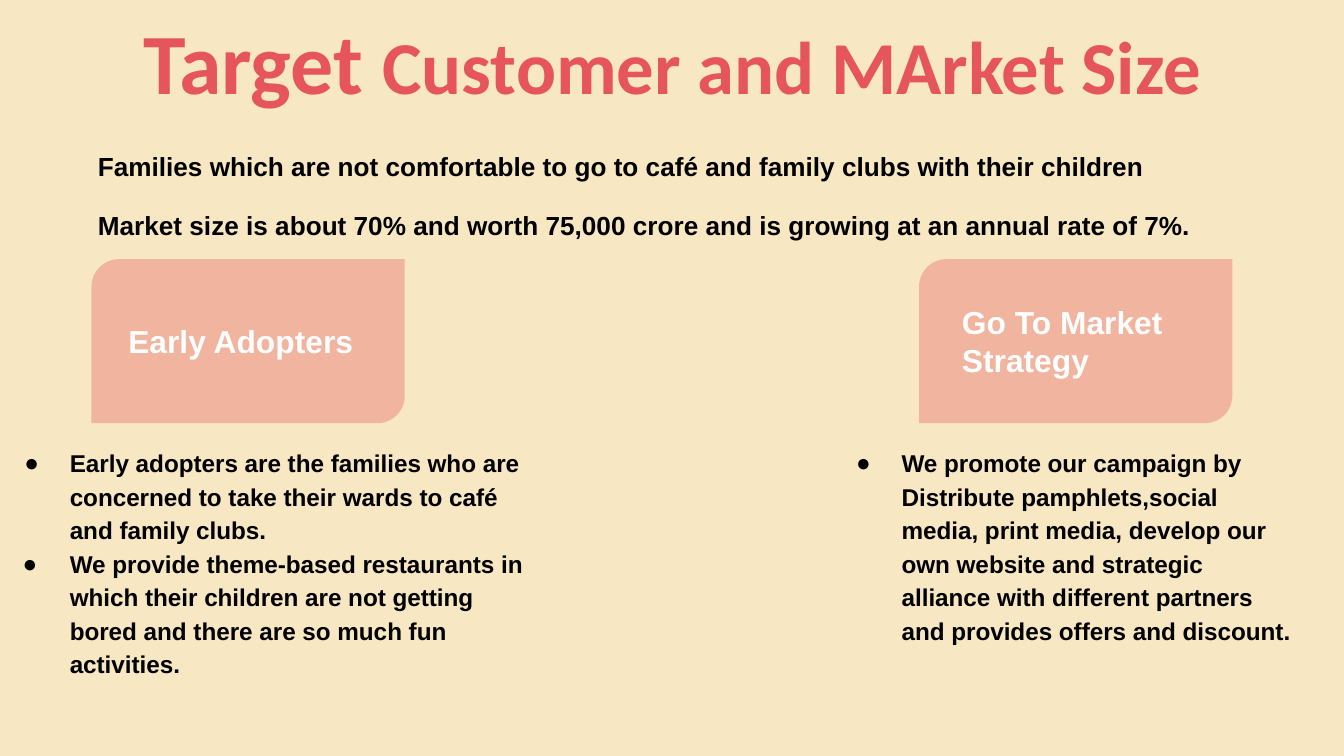
import pptx
import pptx.dml.color
import pptx.enum.shapes
import pptx.enum.text
import pptx.oxml.ns
import pptx.util
from lxml import etree

Cm = pptx.util.Cm
Pt = pptx.util.Pt
ALIGN = pptx.enum.text.PP_ALIGN
ANCHOR = pptx.enum.text.MSO_ANCHOR
qn = pptx.oxml.ns.qn

SAND, CORAL, BLACK, WHITE = "F7E7C3", "E6555C", "000000", "FFFFFF"


def color(hex_string):
    return pptx.dml.color.RGBColor.from_string(hex_string)


class SlideBuilder:
    """Holds the style and the current slide."""

    body_font = "Arial"
    title_font = "Calibri"
    inset = Cm(0.25)
    line_spacing = 1.15

    def __init__(self, presentation):
        self.slide = presentation.slides.add_slide(presentation.slide_layouts[6])
        fill = self.slide.background.fill
        fill.solid()
        fill.fore_color.rgb = color(SAND)

    def text_frame(self, left, top, width, height, anchor=ANCHOR.TOP):
        box = self.slide.shapes.add_textbox(Cm(left), Cm(top), Cm(width), Cm(height))
        frame = box.text_frame
        frame.word_wrap = True
        frame.vertical_anchor = anchor
        frame.margin_left = frame.margin_right = self.inset
        frame.margin_top = frame.margin_bottom = self.inset
        return frame

    def paragraph(self, frame, index):
        return frame.add_paragraph() if index else frame.paragraphs[0]

    def run(self, paragraph, text, size, hex_string, font_name):
        run = paragraph.add_run()
        run.text = text
        run.font.size = Pt(size)
        run.font.name = font_name
        run.font.bold = True
        run.font.color.rgb = color(hex_string)

    def title(self, area, runs):
        paragraph = self.text_frame(*area, anchor=ANCHOR.BOTTOM).paragraphs[0]
        paragraph.alignment = ALIGN.CENTER
        for text, size in runs:
            self.run(paragraph, text, size, CORAL, self.title_font)

    def statements(self, area, texts):
        frame = self.text_frame(*area)
        for index, text in enumerate(texts):
            paragraph = self.paragraph(frame, index)
            paragraph.line_spacing = self.line_spacing
            paragraph.space_before = Pt(12 if index else 0)
            self.run(paragraph, text, 14, BLACK, self.body_font)

    def bullets(self, area, items):
        frame = self.text_frame(*area)
        for index, (text, hanging) in enumerate(items):
            paragraph = self.paragraph(frame, index)
            paragraph.line_spacing = self.line_spacing
            properties = paragraph._p.get_or_add_pPr()
            properties.set("marL", str(Cm(1.27)))
            properties.set("indent", str(-Cm(hanging)))
            bullet_color = etree.SubElement(properties, qn("a:buClr"))
            etree.SubElement(bullet_color, qn("a:srgbClr"), val=BLACK)
            etree.SubElement(properties, qn("a:buFont"), typeface=self.body_font)
            etree.SubElement(properties, qn("a:buChar"), char="●")
            self.run(paragraph, text, 13, BLACK, self.body_font)

    def card(self, left, top, width, height, label, label_width, label_height):
        shape = self.slide.shapes.add_shape(
            pptx.enum.shapes.MSO_SHAPE.ROUND_2_DIAG_RECTANGLE,
            Cm(left), Cm(top), Cm(width), Cm(height))
        shape.adjustments[0] = 0.167
        shape.adjustments[1] = 0
        shape.shadow.inherit = False
        shape.line.fill.background()
        shape.fill.solid()
        shape.fill.fore_color.rgb = color(CORAL)
        fill_color = shape._element.spPr.find(qn("a:solidFill"))[0]
        etree.SubElement(fill_color, qn("a:alpha"), val="34000")

        # The label box sits in the middle of its card
        frame = self.text_frame(left + (width - label_width) / 2,
                                top + (height - label_height) / 2,
                                label_width, label_height)
        self.run(frame.paragraphs[0], label, 17, WHITE, self.body_font)


def main():
    presentation = pptx.Presentation()
    presentation.slide_width = Cm(25.4)
    presentation.slide_height = Cm(14.29)
    builder = SlideBuilder(presentation)

    # Title and market statements
    builder.title((1.73, 0, 21.95, 2.36),
                  [("Target ", 46), ("Customer and MArket Size", 40)])
    builder.statements((1.6, 2.51, 24.3, 2.24), [
        "Families which are not comfortable to go to café and family clubs "
        "with their children",
        "Market size is about 70% and worth 75,000 crore and is growing at an "
        "annual rate of 7%.",
    ])

    # Details below the cards: text and hanging indent
    builder.bullets((-0.2, 8.15, 10.34, 7.04), [
        ("Early adopters are the families who are concerned to take their "
         "wards to café and family clubs.", 0.86),
        ("We provide theme-based restaurants in which their children are not "
         "getting bored and there are so much fun activities.", 0.89),
    ])
    builder.bullets((15.52, 8.15, 9.17, 5.38), [
        ("We promote our campaign by Distribute pamphlets,social media, print "
         "media, develop our own website and strategic alliance with different "
         "partners and provides offers and discount.", 0.86),
    ])

    # Cards: left edge, label and label size
    for left, label, label_width, label_height in [
        (1.73, "Early Adopters", 5.03, 1.24),
        (17.37, "Go To Market Strategy", 4.8, 1.96),
    ]:
        builder.card(left, 4.9, 5.92, 3.1, label, label_width, label_height)

    presentation.save("out.pptx")


if __name__ == "__main__":
    main()
